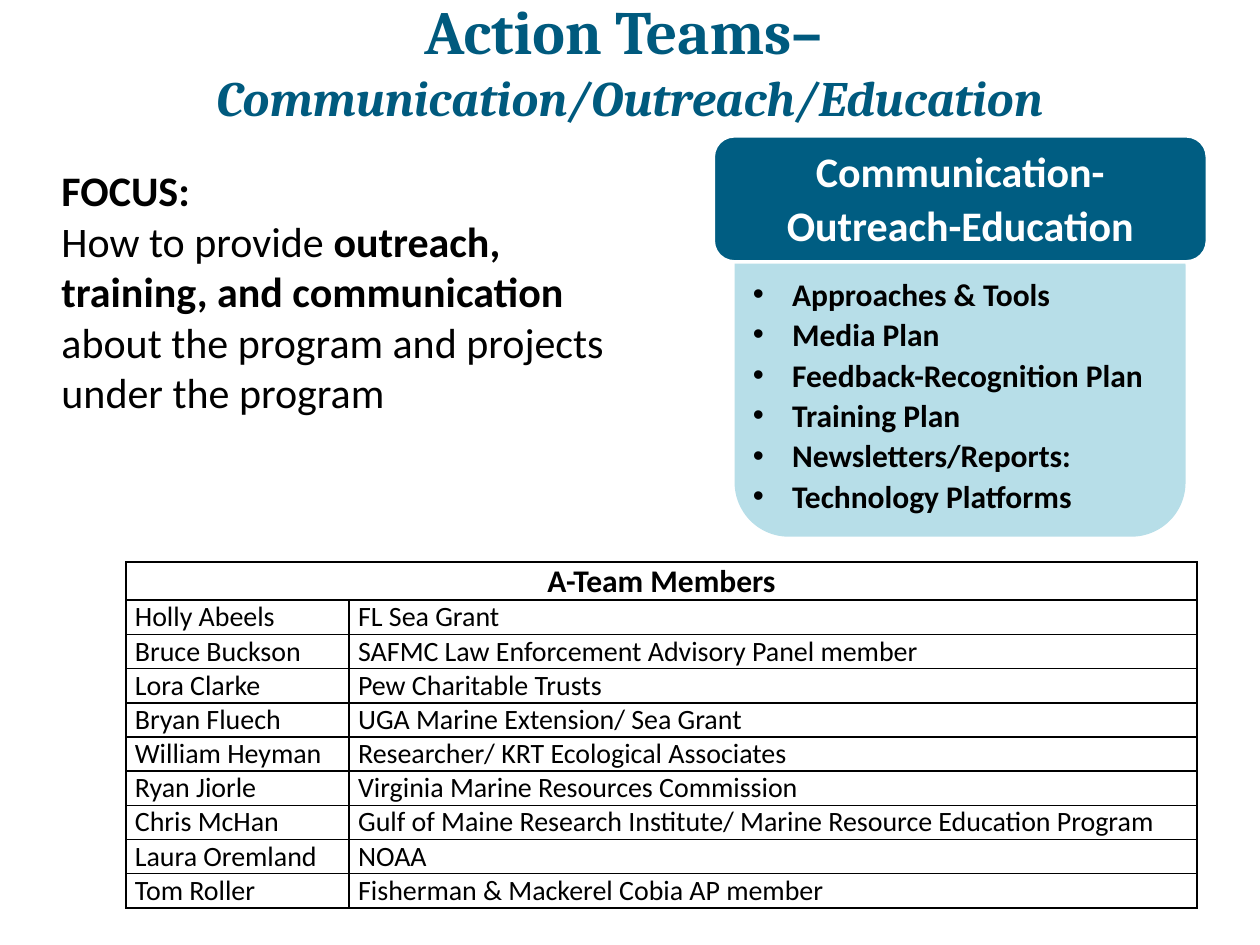
from lxml.etree import SubElement
from pptx import Presentation
from pptx.dml.color import RGBColor
from pptx.enum.shapes import MSO_SHAPE as Shape
from pptx.enum.text import MSO_ANCHOR as Anchor, MSO_AUTO_SIZE as AutoSize, PP_ALIGN as Align
from pptx.oxml.ns import qn
from pptx.util import Cm, Pt


def color(hex_code):
    return RGBColor.from_string(hex_code)


def add_run(paragraph, text, size, bold=False, hex_code="000000", font_name="Calibri"):
    run = paragraph.add_run()
    run.text = text
    run.font.name = font_name
    run.font.size = Pt(size)
    run.font.bold = bold
    run.font.color.rgb = color(hex_code)
    return run


prs = Presentation()
prs.slide_width, prs.slide_height = Cm(25.4), Cm(19.05)
slide = prs.slides.add_slide(prs.slide_layouts[5])

# Title
title = slide.shapes.title
title.left, title.top, title.width, title.height = Cm(0), Cm(-0.84), Cm(25.4), Cm(4.09)
heading = title.text_frame
heading.auto_size = AutoSize.NONE
heading.vertical_anchor = Anchor.MIDDLE
team_line, topic_line = heading.paragraphs[0], heading.add_paragraph()
add_run(team_line, "Action Teams– ", 35.1, True, "005A7E", "Cambria")
topic = add_run(topic_line, "Communication/Outreach/Education", 28.3, True, "005A7E", "Cambria")
topic.font.italic = True
for line in (team_line, topic_line):
    line.alignment = Align.CENTER

# Focus statement
focus = slide.shapes.add_textbox(Cm(0.99), Cm(3.2), Cm(12.27), Cm(5.51)).text_frame
focus.word_wrap = True
add_run(focus.paragraphs[0], "FOCUS:", 24, True)
statement = focus.add_paragraph()
statement.space_after = Pt(24)
for text, bold in [
    ("How to provide ", False),
    ("outreach, training, and communication", True),
    (" about the program and projects under the program", False),
]:
    add_run(statement, text, 24, bold)

# Task card, with its header on top
tasks_card = slide.shapes.add_shape(
    Shape.ROUNDED_RECTANGLE, Cm(14.81), Cm(4.27), Cm(9.09), Cm(6.55))
tasks_card.line.fill.background()
header_card = slide.shapes.add_shape(
    Shape.ROUNDED_RECTANGLE, Cm(14.38), Cm(2.74), Cm(9.96), Cm(2.54))
header_card.line.color.rgb = color("FFFFFF")
header_card.line.width = Pt(2)
for card, fill in [(tasks_card, "B7DEE8"), (header_card, "005D82")]:
    card.shadow.inherit = False
    card.fill.solid()
    card.fill.fore_color.rgb = color(fill)
    card.text_frame.word_wrap = True
    card.text_frame.vertical_anchor = Anchor.BOTTOM

header = header_card.text_frame.paragraphs[0]
header.alignment = Align.CENTER
header.line_spacing = 1.07
header.space_after = Pt(8)
add_run(header, "Communication-Outreach-Education", 24, True, "FFFFFF")

tasks = tasks_card.text_frame
tasks.margin_left = tasks.margin_right = Cm(0.05)
for i, task in enumerate([
    "Approaches & Tools",
    "Media Plan",
    "Feedback-Recognition Plan",
    "Training Plan",
    "Newsletters/Reports:",
    "Technology Platforms",
]):
    item = tasks.add_paragraph() if i else tasks.paragraphs[0]
    item.alignment = Align.LEFT
    item.line_spacing = 1.07
    props = item._p.get_or_add_pPr()
    props.set("marL", str(Cm(0.79)))
    props.set("indent", str(Cm(-0.79)))
    SubElement(props, qn("a:buFont"), typeface="Arial")
    SubElement(props, qn("a:buChar"), char="•")
    add_run(item, task, 18, True)

# Team members
members = [
    ("Holly Abeels", "FL Sea Grant"),
    ("Bruce Buckson", "SAFMC Law Enforcement Advisory Panel member"),
    ("Lora Clarke", "Pew Charitable Trusts"),
    ("Bryan Fluech", "UGA Marine Extension/ Sea Grant"),
    ("William Heyman", "Researcher/ KRT Ecological Associates"),
    ("Ryan Jiorle", "Virginia Marine Resources Commission"),
    ("Chris McHan", "Gulf of Maine Research Institute/ Marine Resource Education Program"),
    ("Laura Oremland", "NOAA"),
    ("Tom Roller", "Fisherman & Mackerel Cobia AP member"),
]
roster = slide.shapes.add_table(
    len(members) + 1, 2, Cm(2.54), Cm(11.33), Cm(21.59), Cm(6.98)).table
roster.columns[0].width, roster.columns[1].width = Cm(4.5), Cm(17.09)
for r, entries in enumerate([("A-Team Members", ""), *members]):
    is_heading = r == 0
    roster.rows[r].height = Cm(0.77 if is_heading else 0.69)
    for c, entry in enumerate(entries):
        cell = roster.cell(r, c)
        cell.margin_left = cell.margin_right = Cm(0.18)
        cell.margin_top = cell.margin_bottom = 0
        cell_props = cell._tc.get_or_add_tcPr()
        for side in ("lnL", "lnR", "lnT", "lnB"):
            border = SubElement(cell_props, qn(f"a:{side}"), w=str(Pt(1)))
            SubElement(SubElement(border, qn("a:solidFill")), qn("a:srgbClr"), val="000000")
        cell.fill.background()
        if entry:
            paragraph = cell.text_frame.paragraphs[0]
            paragraph.alignment = Align.CENTER if is_heading else Align.LEFT
            add_run(paragraph, entry, 18 if is_heading else 16, is_heading)
roster.cell(0, 0).merge(roster.cell(0, 1))

prs.save("out.pptx")
